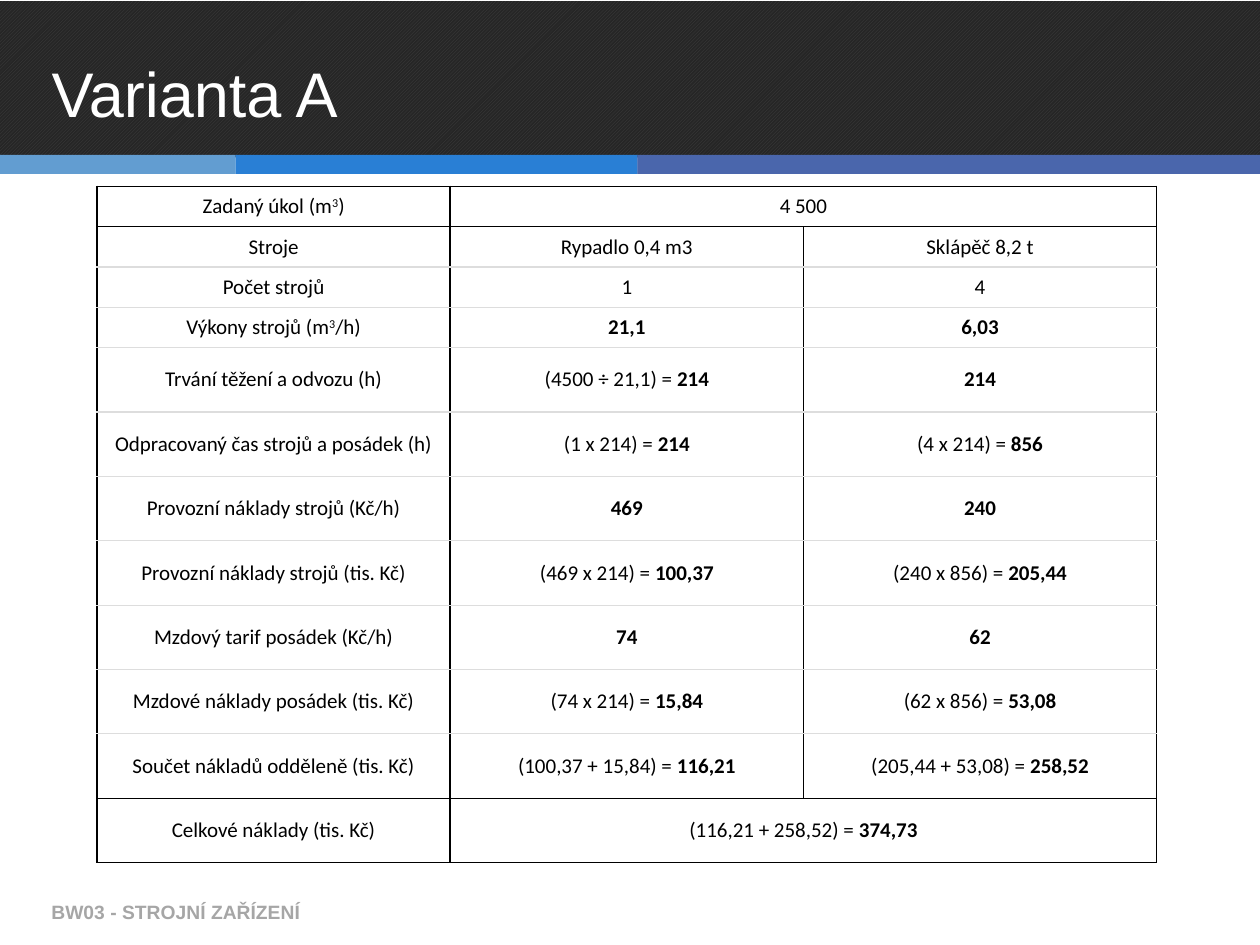
"""Builds the Varianta A slide with its machine cost table."""
from dataclasses import dataclass

from lxml import etree
from pptx import Presentation
from pptx.dml.color import RGBColor
from pptx.enum.dml import MSO_PATTERN
from pptx.enum.shapes import MSO_SHAPE
from pptx.enum.text import MSO_ANCHOR, PP_ALIGN
from pptx.oxml.ns import qn
from pptx.util import Inches, Pt

RECT = MSO_SHAPE.RECTANGLE
DIAGONAL = MSO_PATTERN.DARK_UPWARD_DIAGONAL
MIDDLE = MSO_ANCHOR.MIDDLE
LEFT, CENTER = PP_ALIGN.LEFT, PP_ALIGN.CENTER


@dataclass(frozen=True)
class Theme:
    """Colours, fonts and type sizes."""
    white: str = "FFFFFF"
    black: str = "000000"
    band_fore: str = "404040"
    band_back: str = "262626"
    stripes: tuple = ("629DD1", "297FD5", "4A66AC")
    grid: str = "DDDDDD"
    footer: str = "A6A6A6"
    head_font: str = "Arial"
    table_font: str = "Calibri"
    title_size: float = 36
    table_size: float = 12
    footer_size: float = 11


THEME = Theme()
ROWS = [
    ("Zadaný úkol (m|^3|)", "4 500"),
    ("Stroje", "Rypadlo 0,4 m3", "Sklápěč 8,2 t"),
    ("Počet strojů", "1", "4"),
    ("Výkony strojů (m|^3|/h)", "*21,1", "*6,03"),
    ("Trvání těžení a odvozu (h)", "(4500 ÷ 21,1) = |*214", "*214"),
    ("Odpracovaný čas strojů a posádek (h)", "(1 x 214) = |*214", "(4 x 214) = |*856"),
    ("Provozní náklady strojů (Kč/h)", "*469", "*240"),
    ("Provozní náklady strojů (tis. Kč)", "(469 x 214) = |*100,37", "(240 x 856) = |*205,44"),
    ("Mzdový tarif posádek (Kč/h)", "*74", "*62"),
    ("Mzdové náklady posádek (tis. Kč)", "(74 x 214) = |*15,84", "(62 x 856) = |*53,08"),
    ("Součet nákladů odděleně (tis. Kč)", "(100,37 + 15,84) = |*116,21",
     "(205,44 + 53,08) = |*258,52"),
    ("Celkové náklady (tis. Kč)", "(116,21 + 258,52) = |*374,73"),
]
SHORT_ROWS = 4
SHORT_HEIGHT = 0.32
RULED = (0, 1, len(ROWS) - 1, len(ROWS))


def write(tf, text, *, font, size, color, bold=False, align=LEFT):
    """Write runs parted by |, where * marks bold and ^ superscript."""
    p = tf.paragraphs[0]
    p.alignment = align
    for part in text.split("|"):
        r = p.add_run()
        r.text = part.lstrip("*^")
        r.font.name = font
        r.font.size = Pt(size)
        r.font.bold = bold or part.startswith("*")
        r.font.color.rgb = RGBColor.from_string(color)
        if part.startswith("^"):
            r.font._element.set("baseline", "30000")


def add_border(cell, side, color, width):
    """Add one solid border line to a table cell."""
    ln = etree.SubElement(cell._tc.get_or_add_tcPr(), qn(f"a:ln{side}"), w=str(Pt(width)))
    fill = etree.SubElement(ln, qn("a:solidFill"))
    etree.SubElement(fill, qn("a:srgbClr"), val=color)


class SlideBuilder:
    """Holds the theme and the current slide."""

    def __init__(self, s, theme):
        self.s = s
        self.theme = theme

    def bar(self, x, y, w, h, color, back=None):
        """Add a plain rectangle, or a hatched one if back is given."""
        sp = self.s.shapes.add_shape(RECT, Inches(x), Inches(y), Inches(w), Inches(h))
        sp.shadow.inherit = False
        sp.line.fill.background()
        if back:
            sp.fill.patterned()
            sp.fill.pattern = DIAGONAL
            sp.fill.back_color.rgb = RGBColor.from_string(back)
        else:
            sp.fill.solid()
        sp.fill.fore_color.rgb = RGBColor.from_string(color)

    def title(self, text, x, y, w, h):
        """Place the title placeholder in front of the bars."""
        t = self.theme
        sp = self.s.shapes.title
        sp.left, sp.top, sp.width, sp.height = map(Inches, (x, y, w, h))
        sp.text_frame.vertical_anchor = MIDDLE
        write(sp.text_frame, text, font=t.head_font, size=t.title_size, color=t.white)
        sp.element.getparent().append(sp.element)

    def footer(self, text, x, y, w, h):
        """Add the course line at the foot."""
        t = self.theme
        sp = self.s.shapes.add_textbox(Inches(x), Inches(y), Inches(w), Inches(h))
        tf = sp.text_frame
        tf.word_wrap = True
        tf.vertical_anchor = MIDDLE
        write(tf, text, font=t.head_font, size=t.footer_size, color=t.footer, bold=True)

    def table(self, rows, x, y, w, h):
        """Add the cost table, merging the value cells of two-part rows."""
        count = max(map(len, rows))
        frame = self.s.shapes.add_table(len(rows), count, Inches(x), Inches(y),
                                        Inches(w), Inches(h))
        tbl = frame.table
        tbl.first_row = tbl.horz_banding = False
        tall = (h - SHORT_ROWS * SHORT_HEIGHT) / (len(rows) - SHORT_ROWS)
        for i, texts in enumerate(rows):
            tbl.rows[i].height = Inches(SHORT_HEIGHT if i < SHORT_ROWS else tall)
            for j in range(count):
                self.cell(tbl.cell(i, j), i, texts[j] if j < len(texts) else "")
            if len(texts) < count:
                tbl.cell(i, len(texts) - 1).merge(tbl.cell(i, count - 1))

    def cell(self, cell, row, text):
        """Format one cell and write its text."""
        t = self.theme
        cell.vertical_anchor = MIDDLE
        cell.margin_left = cell.margin_right = Inches(0.05)
        cell.margin_top = cell.margin_bottom = Inches(0.05)
        for side in "LR":
            add_border(cell, side, t.black, 1)
        for side, edge in (("T", row), ("B", row + 1)):
            add_border(cell, side, *((t.black, 1) if edge in RULED else (t.grid, 0.75)))
        cell.fill.background()
        if text:
            write(cell.text_frame, text, font=t.table_font, size=t.table_size,
                  color=t.black, align=CENTER)


def main():
    """Build and save the slide."""
    prs = Presentation()
    prs.slide_width, prs.slide_height = Inches(10), Inches(7.5)
    b = SlideBuilder(prs.slides.add_slide(prs.slide_layouts[5]), THEME)
    b.bar(0, 0.01, 10, 1.24, THEME.band_fore, back=THEME.band_back)
    edges = (0, 1.87, 5.06, 10)
    for x, end, color in zip(edges, edges[1:], THEME.stripes):
        b.bar(x, 1.23, end - x, 0.15, color)
    b.title("Varianta A", 0.31, 0.2, 9.38, 1.06)
    b.table(ROWS, 0.77, 1.48, 8.41, 5.37)
    b.footer("BW03 - STROJNÍ ZAŘÍZENÍ", 0.31, 7.04, 6.7, 0.4)
    prs.save("out.pptx")


if __name__ == "__main__":
    main()
